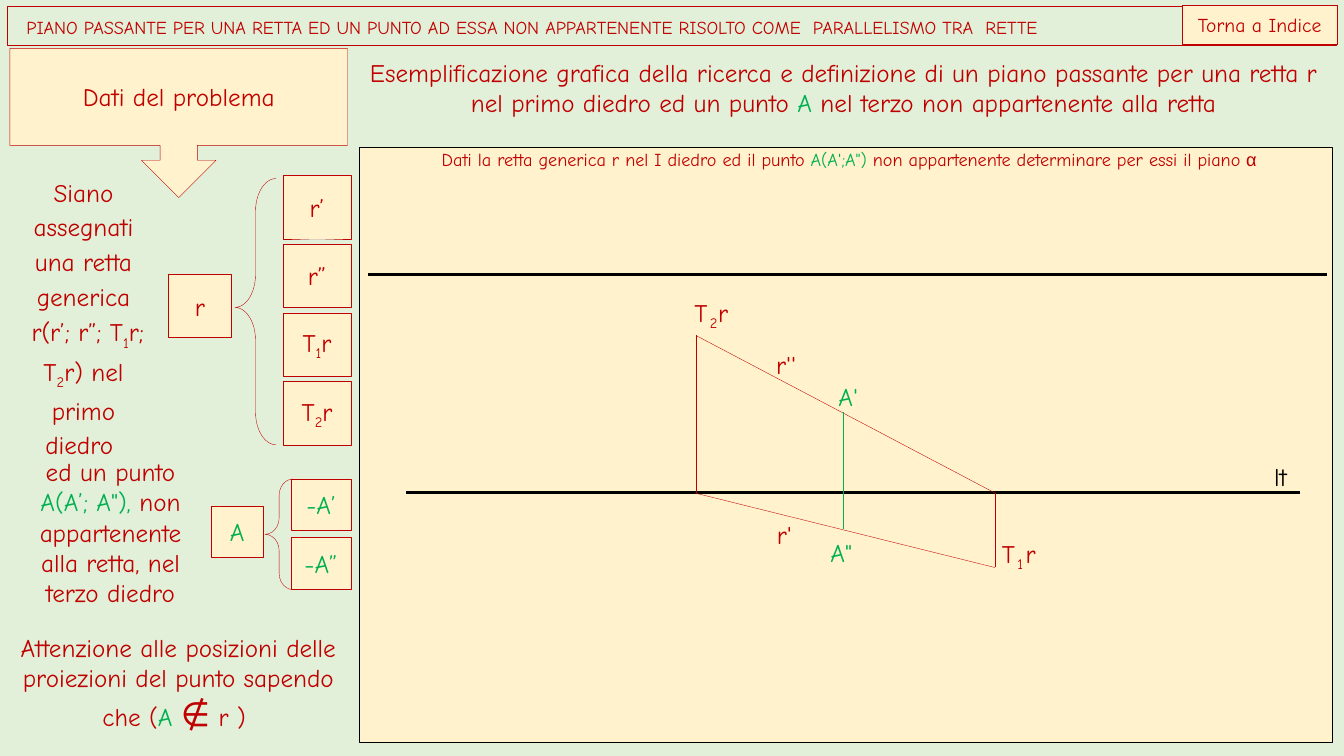
from pptx import Presentation
from pptx.dml.color import RGBColor
from pptx.enum.shapes import MSO_CONNECTOR, MSO_SHAPE
from pptx.enum.text import MSO_ANCHOR, MSO_AUTO_SIZE, PP_ALIGN
from pptx.oxml.ns import qn
from pptx.util import Cm, Pt
from lxml import etree

RECT = MSO_SHAPE.RECTANGLE
BRACE = MSO_SHAPE.LEFT_BRACE
CALLOUT = MSO_SHAPE.DOWN_ARROW_CALLOUT
STRAIGHT = MSO_CONNECTOR.STRAIGHT
MIDDLE = MSO_ANCHOR.MIDDLE
GROW = MSO_AUTO_SIZE.SHAPE_TO_FIT_TEXT
LEFT, CENTER = PP_ALIGN.LEFT, PP_ALIGN.CENTER

COLORS = {"back": "E2F0D9", "cream": "FFF2CC", "red": "C00000",
          "green": "00B050", "black": "000000"}
FONT = "Comic Neue"
SUB = {"sub": True}
GREEN = {"color": "green"}


def paint(name):
    return RGBColor.from_string(COLORS[name])


def style(run, size, color="red", font=FONT, sub=False):
    run.font.size = Pt(size)
    run.font.name = font
    run.font.color.rgb = paint(color)
    if sub:
        run._r.get_or_add_rPr().set("baseline", "-25000")


def write(frame, paras, size=18, color="red", align=CENTER, space=None, after=None):
    for i, parts in enumerate(paras):
        para = frame.add_paragraph() if i else frame.paragraphs[0]
        para.alignment = align
        if space:
            para.line_spacing = space
        if after:
            para.space_after = Pt(after)
        for part in parts:
            text, look = part if isinstance(part, tuple) else (part, {})
            run = para.add_run()
            run.text = text
            style(run, **{"size": size, "color": color, **look})


def shape(slide, kind, box, fill="cream", line="red", width=0.25):
    item = slide.shapes.add_shape(kind, *map(Cm, box))
    item.shadow.inherit = False
    if fill:
        item.fill.solid()
        item.fill.fore_color.rgb = paint(fill)
    else:
        item.fill.background()
    item.line.color.rgb = paint(line)
    item.line.width = Pt(width)
    item.text_frame.vertical_anchor = MIDDLE
    return item


def note(slide, box, paras, wrap=True, inset=True, **look):
    frame = slide.shapes.add_textbox(*map(Cm, box)).text_frame
    frame.word_wrap = wrap
    frame.auto_size = GROW
    if not inset:
        frame.margin_left = frame.margin_right = 0
        frame.margin_top = frame.margin_bottom = 0
    write(frame, paras, **look)


def line(slide, start, end, color="red", width=0.25):
    item = slide.shapes.add_connector(STRAIGHT, *map(Cm, start + end))
    item.line.color.rgb = paint(color)
    item.line.width = Pt(width)
    etree.SubElement(item._element.spPr, qn("a:effectLst"))


def header(slide, box):
    x, y, w, h = box
    bar = shape(slide, RECT, box, fill=None)
    title = ("PIANO PASSANTE PER UNA RETTA ED UN PUNTO AD ESSA NON APPARTENENTE "
             "RISOLTO COME  PARALLELISMO TRA  RETTE")
    write(bar.text_frame, [[(" ", {"size": 20}), title]], size=13, align=LEFT, space=0.9)
    button = shape(slide, RECT, (x + w - 3.89, y - 0.02, 3.91, h))
    write(button.text_frame, [["Torna a Indice"]], size=14)


def intro(slide, box):
    item = shape(slide, CALLOUT, box)
    write(item.text_frame, [["Dati del problema"]])


def topic(slide, box):
    note(slide, box, [[
        "Esemplificazione grafica della ricerca e definizione di un piano passante "
        "per una retta r nel primo diedro ed un punto ",
        ("A ", GREEN), "nel terzo non appartenente alla retta"]])


def datum(slide, box, paras, space, key, brace, bends, cells, pitch, names, color):
    x, y, w, h = box
    note(slide, box, paras, space=space)
    left, top, wide, high = cells
    spots = [(key[:4], key[4])]
    spots += [((left, top + i * pitch, wide, high), name) for i, name in enumerate(names)]
    for (dx, dy, cw, ch), name in spots:
        cell = shape(slide, RECT, (x + dx, y + dy, cw, ch))
        write(cell.text_frame, [name], color=color, after=10)
    dx, dy, bw, bh = brace
    item = shape(slide, BRACE, (x + dx, y + dy, bw, bh), fill=None)
    for i, bend in enumerate(bends):
        item.adjustments[i] = bend


def trace(slide, x, y, digit):
    for dx, wide, text, look in (
            (0, 0.43, "T", {}), (0.39, 0.22, digit, SUB), (0.6, 0.3, "r", {})):
        note(slide, (x + dx, y, wide, 0.76), [[(text, look)]],
             wrap=False, inset=False, align=LEFT)


def drawing(slide, box):
    x, y, w, h = box
    shape(slide, RECT, box, line="black", width=0)
    ground = 8.71
    for x1, x2, level in ((0.2, 24.36, 3.2), (1.17, 23.7, ground)):
        line(slide, (x + x1, y + level), (x + x2, y + level), "black", 0)
    for x1, y1, x2, y2, color in (
            (8.48, 4.75, 16, ground, "red"),
            (8.43, ground, 16, 10.59, "red"),
            (16, ground, 16, 10.59, "red"),
            (8.48, ground, 8.48, 4.73, "red"),
            (12.19, 6.68, 12.19, 9.63, "green")):
        line(slide, (x + x1, y + y1), (x + x2, y + y2), color)
    for dx, dy, wide, text, color in (
            (23.04, 7.92, 0.74, "lt", "black"),
            (12.06, 5.89, 0.71, "A'", "green"),
            (11.86, 9.83, 0.74, 'A"', "green"),
            (10.51, 9.37, 0.56, "r'", "red"),
            (10.49, 5.1, 0.81, "r''", "red")):
        note(slide, (x + dx, y + dy, wide, 0.76), [[text]],
             wrap=False, inset=False, align=LEFT, color=color)
    trace(slide, x + 16.18, y + 9.86, "1")
    trace(slide, x + 8.43, y + 3.77, "2")
    note(slide, (x + 0.25, y + 0.02, w - 0.35, 0.56), [[
        "Dati la retta generica r nel I diedro ed il punto ", ("A(A';A\") ", GREEN),
        "non appartenente determinare per essi il piano ", ("α", {"font": "Arial"})]],
        inset=False, size=13)


def warning(slide, box):
    note(slide, box, [[
        "Attenzione alle posizioni delle proiezioni del punto sapendo che (",
        ("A ", GREEN), ("∉", {"size": 24}), " r ) "]])


def main():
    deck = Presentation()
    deck.slide_width, deck.slide_height = Cm(33.87), Cm(19.05)
    slide = deck.slides.add_slide(deck.slide_layouts[6])
    slide.background.fill.solid()
    slide.background.fill.fore_color.rgb = paint("back")

    intro(slide, (0.25, 1.22, 8.51, 3.76))
    topic(slide, (8.76, 1.32, 24.99, 1.8))
    datum(slide, (0.15, 4.22, 3.91, 7.29),
          [["Siano assegnati una retta generica"],
           [" r(r’; r”; T", ("1", SUB), "r; T", ("2", SUB), "r) nel primo diedro "]],
          1.15, (4.09, 2.69, 1.6, 1.6, ["r"]),
          (5.77, 0.28, 1.04, 6.71), (0.797, 0.484),
          (6.99, 0.2, 1.7, 1.6), 1.73,
          [["r’"], ["r”"], ["T", ("1", SUB), "r"], ["T", ("2", SUB), "r"]], "red")
    datum(slide, (0.23, 11.38, 5.11, 4.11),
          [["ed un punto ", ("A(A’; A\"), ", GREEN),
            "non appartenente alla retta, nel terzo diedro"]],
          None, (5.1, 1.37, 1.3, 1.3, ["A"]),
          (6.45, 0.69, 0.71, 2.79), (0.579, 0.5),
          (7.11, 0.69, 1.5, 1.3), 1.47, [["-A’"], ["-A”"]], "green")
    header(slide, (0.18, 0.15, 33.5, 0.99))
    drawing(slide, (9.07, 3.71, 24.51, 15.01))
    warning(slide, (0.15, 15.8, 8.69, 2.82))
    deck.save("out.pptx")


if __name__ == "__main__":
    main()
